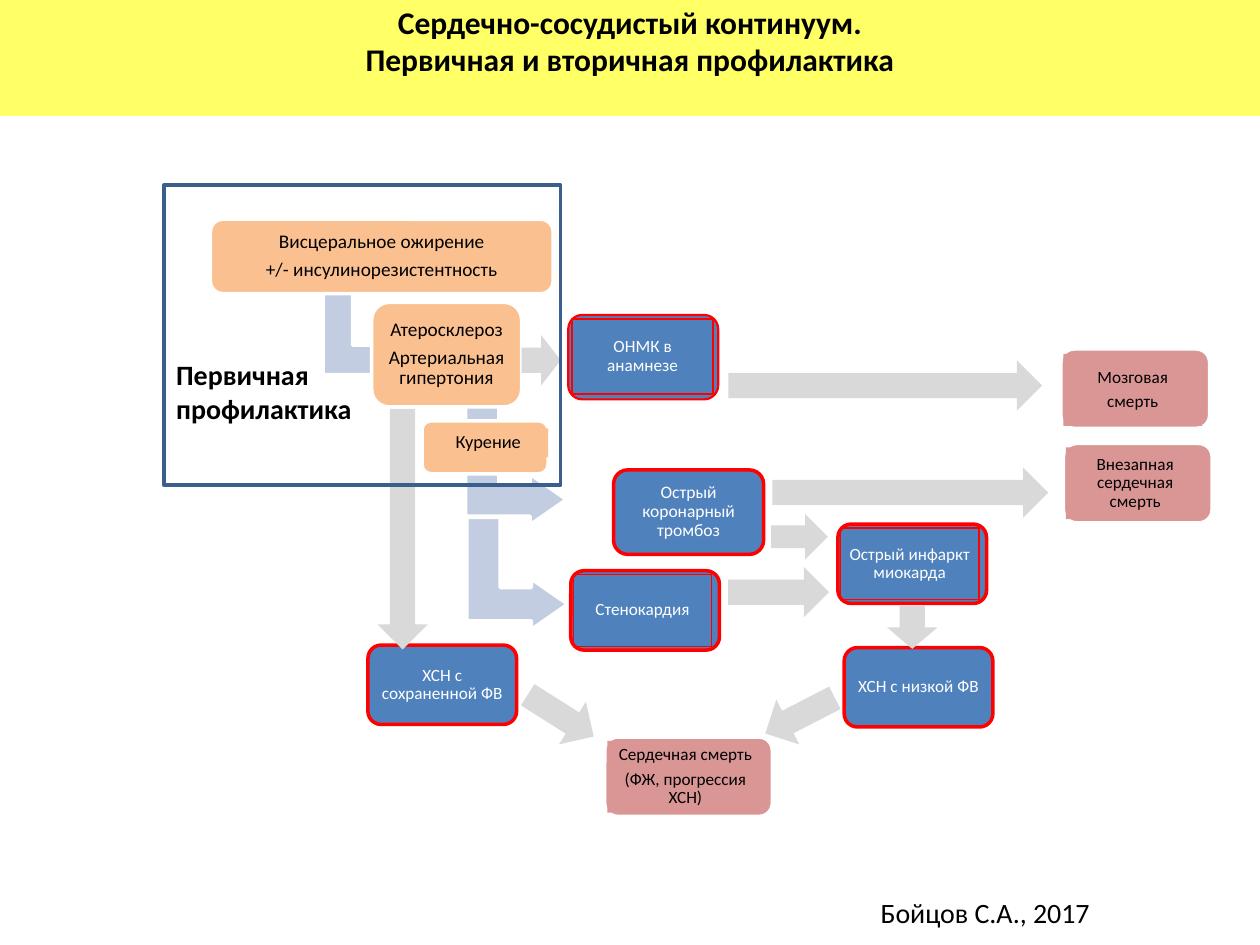
from pptx import Presentation, util as u
from pptx.dml.color import RGBColor
from pptx.enum import shapes, text

COLORS = {
    "yellow": "FFFF66", "peach": "FAC090", "blue": "4F81BD", "rose": "D99694",
    "pale": "C2CDE1", "grey": "D9D9D9", "red": "FF0000", "navy": "3A5F8C",
    "white": "FFFFFF", "black": "000000",
}
FONT = "Calibri"

# Content: places are (left, top, width, height) in inches
TITLE = "Сердечно-сосудистый континуум.\vПервичная и вторичная профилактика"

# Box kinds: fill, outline, text colour
KINDS = {
    "risk": ("peach", "white", "black"),
    "disease": ("blue", "red", "white"),
    "death": ("rose", "white", "black"),
}
# Kind, place, font size, paragraphs, inner panel place, outline width
BOXES = [
    ("risk", (1.67, 1.74, 2.72, 0.59), 11,
     ["Висцеральное ожирение", "+/- инсулинорезистентность"], None, 2),
    ("risk", (2.95, 2.4, 1.19, 0.83), 11,
     ["Атеросклероз", "Артериальная гипертония"], None, 2),
    ("risk", (3.35, 3.34, 1, 0.42), 10.5, ["Курение"], (3.4, 3.4, 0.95, 0.23), 2),
    ("disease", (4.51, 2.5, 1.19, 0.67), 9.8, ["ОНМК в анамнезе"],
     (4.54, 2.53, 1.12, 0.6), 1.25),
    ("disease", (4.87, 3.73, 1.19, 0.67), 10, ["Острый коронарный тромбоз"], None, 2),
    ("disease", (4.53, 4.53, 1.18, 0.63), 9.8, ["Стенокардия"],
     (4.55, 4.56, 1.1, 0.57), 2),
    ("disease", (6.65, 4.16, 1.18, 0.63), 9.8, ["Острый инфаркт миокарда"],
     (6.67, 4.19, 1.1, 0.57), 2),
    ("disease", (6.7, 5.14, 1.18, 0.63), 9.8, ["ХСН с низкой ФВ"], None, 2),
    ("disease", (2.92, 5.12, 1.18, 0.63), 9.8, ["ХСН с сохраненной ФВ"], None, 2),
    ("death", (8.42, 2.77, 1.18, 0.63), 9.8, ["Мозговая", "смерть"],
     (8.44, 2.81, 1.1, 0.57), 2),
    ("death", (8.44, 3.52, 1.18, 0.63), 9.8, ["Внезапная сердечная смерть"],
     (8.46, 3.55, 1.1, 0.57), 2),
    ("death", (4.8, 5.85, 1.33, 0.63), 9.8,
     ["Сердечная смерть", "(ФЖ, прогрессия ХСН)"], (4.82, 5.88, 1.24, 0.57), 2),
]
BENT_ARROWS = [
    (2.61, 2.28, 0.71, 0.8), (3.51, 3.18, 1.17, 0.8), (3.66, 4.15, 0.89, 0.8),
]
# Place, rotation
ARROWS = [
    ((4.14, 2.66, 0.31, 0.4), 0), ((5.78, 2.86, 2.49, 0.4), 0),
    ((6.13, 3.71, 2.19, 0.4), 0), ((6.12, 4.08, 0.45, 0.36), 0),
    ((5.78, 4.5, 0.8, 0.4), 0), ((7.07, 4.78, 0.34, 0.4), 90),
    ((2.24, 4, 1.91, 0.4), 90), ((4.14, 5.48, 0.62, 0.4), 32.3),
    ((6.04, 5.48, 0.62, 0.4), 152.8),
]
PREVENTION_FRAME = (1.3, 1.47, 3.15, 2.38)
# Text, place, bold, wrap
LABELS = [
    ("Первичная профилактика", (1.3, 2.79, 1.62, 0.64), True, True),
    ("Бойцов С.А., 2017", (6.89, 7.06, 1.88, 0.37), False, False),
]


def rgb(name):
    return RGBColor.from_string(COLORS[name])


def inches(place):
    return [u.Inches(v) for v in place]


def set_attrs(obj, values):
    for name, value in values.items():
        setattr(obj, name, value)


def add_shape(s, preset, place, fill=None, line=None, width=2, rotation=0):
    sp = s.shapes.add_shape(preset, *inches(place))
    sp.shadow.inherit = False
    sp.rotation = rotation
    if fill:
        sp.fill.solid()
        sp.fill.fore_color.rgb = rgb(fill)
    else:
        sp.fill.background()
    if line:
        sp.line.color.rgb = rgb(line)
        sp.line.width = u.Pt(width)
    else:
        sp.line.fill.background()
    return sp


def style_font(font, size, color, bold=False):
    set_attrs(font, {"name": FONT, "size": u.Pt(size), "bold": bold})
    font.color.rgb = rgb(color)


def write_box(sp, lines, size, color):
    tf = sp.text_frame
    margin = u.Inches(0.05 if size == 11 else 0.04)
    set_attrs(tf, {
        "word_wrap": True, "vertical_anchor": text.MSO_ANCHOR.MIDDLE,
        "margin_left": margin, "margin_right": margin,
        "margin_top": margin, "margin_bottom": margin,
    })
    for i, line in enumerate(lines):
        p = tf.add_paragraph() if i else tf.paragraphs[0]
        set_attrs(p, {"alignment": text.PP_ALIGN.CENTER, "line_spacing": 0.9,
                      "space_after": u.Pt(round(0.35 * size, 1))})
        r = p.add_run()
        r.text = line
        style_font(r.font, size, color)


def add_box(s, kind, place, size, lines, panel, width):
    fill, line, color = KINDS[kind]
    sp = add_shape(s, shapes.MSO_SHAPE.ROUNDED_RECTANGLE, place, fill, line, width)
    if panel:
        # Disease panels are thin red frames, the others are plain fills
        if kind == "disease":
            look = {"line": line, "width": min(width, 1.25) if width < 2 else 0.75}
        else:
            look = {"fill": fill}
        sp = add_shape(s, shapes.MSO_SHAPE.RECTANGLE, panel, **look)
    write_box(sp, lines, size, color)


def add_title(s):
    sp = s.shapes.title
    set_attrs(sp, dict(zip(("left", "top", "width", "height"),
                           inches((0, 0, 10, 0.92)))))
    sp.fill.solid()
    sp.fill.fore_color.rgb = rgb("yellow")
    tf = sp.text_frame
    tf.text = TITLE
    set_attrs(tf, {"vertical_anchor": text.MSO_ANCHOR.TOP, "word_wrap": True,
                   "auto_size": text.MSO_AUTO_SIZE.NONE,
                   "margin_top": u.Inches(0.02)})
    p = tf.paragraphs[0]
    p.alignment = text.PP_ALIGN.CENTER
    for r in p.runs:
        style_font(r.font, 18, "black", True)


def add_label(s, label, place, bold, wrap):
    tf = s.shapes.add_textbox(*inches(place)).text_frame
    tf.text = label
    set_attrs(tf, {"word_wrap": wrap,
                   "auto_size": text.MSO_AUTO_SIZE.SHAPE_TO_FIT_TEXT})
    style_font(tf.paragraphs[0].runs[0].font, 16, "black", bold)


def main():
    prs = Presentation()
    set_attrs(prs, {"slide_width": u.Inches(10), "slide_height": u.Inches(7.5)})
    s = prs.slides.add_slide(prs.slide_layouts[5])
    add_title(s)

    # Bent arrows between the risk factors lie behind the boxes
    for place in BENT_ARROWS:
        sp = add_shape(s, shapes.MSO_SHAPE.BENT_UP_ARROW, place, "pale", "white",
                       rotation=90)
        for i, value in enumerate((0.33, 0.25, 0.36)):
            sp.adjustments[i] = value

    # Stages of the continuum and the paths between them
    for box in BOXES:
        add_box(s, *box)
    for place, rotation in ARROWS:
        add_shape(s, shapes.MSO_SHAPE.RIGHT_ARROW, place, "grey", rotation=rotation)

    # Primary prevention area and labels
    add_shape(s, shapes.MSO_SHAPE.RECTANGLE, PREVENTION_FRAME, line="navy")
    for label in LABELS:
        add_label(s, *label)
    prs.save("out.pptx")


if __name__ == "__main__":
    main()
